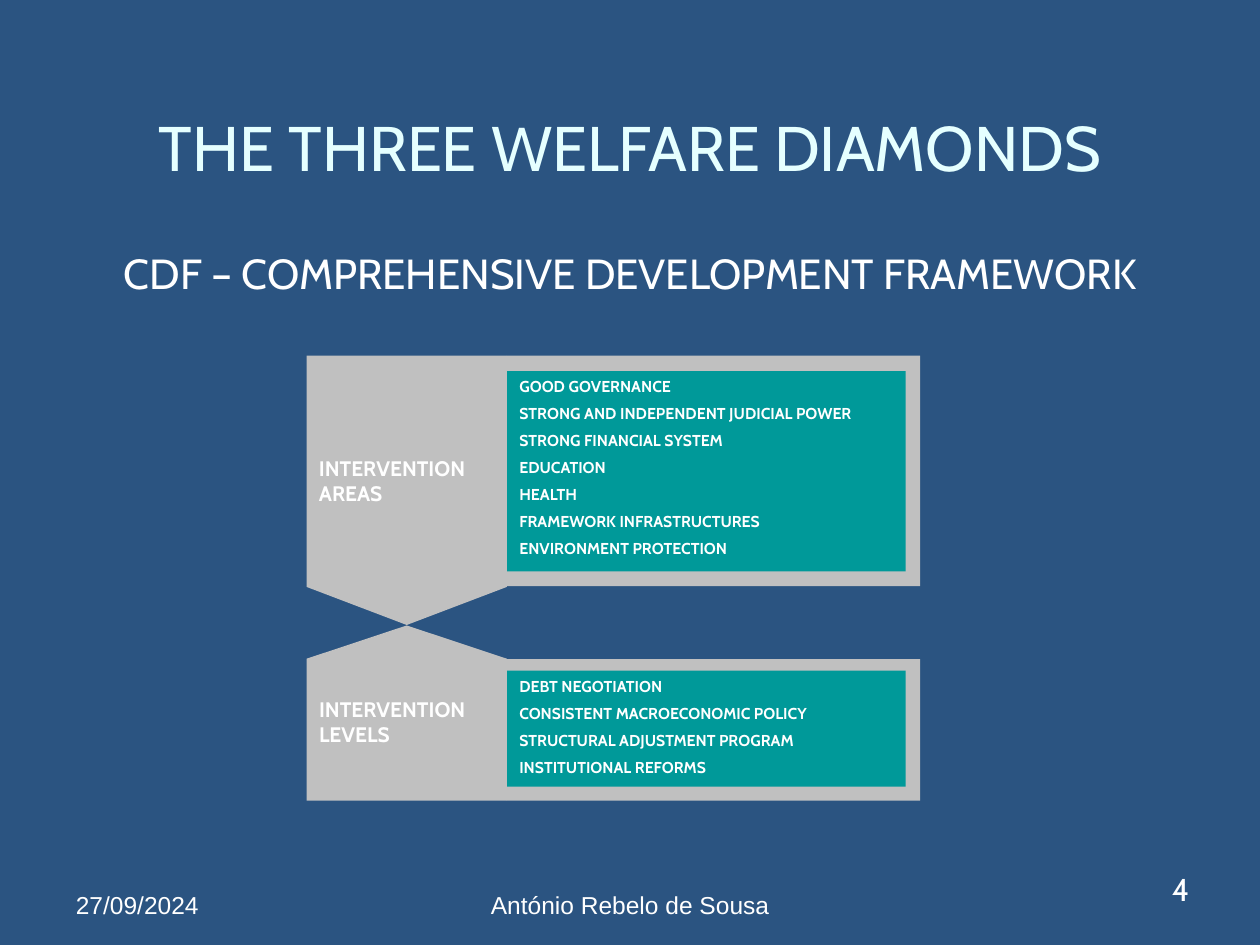
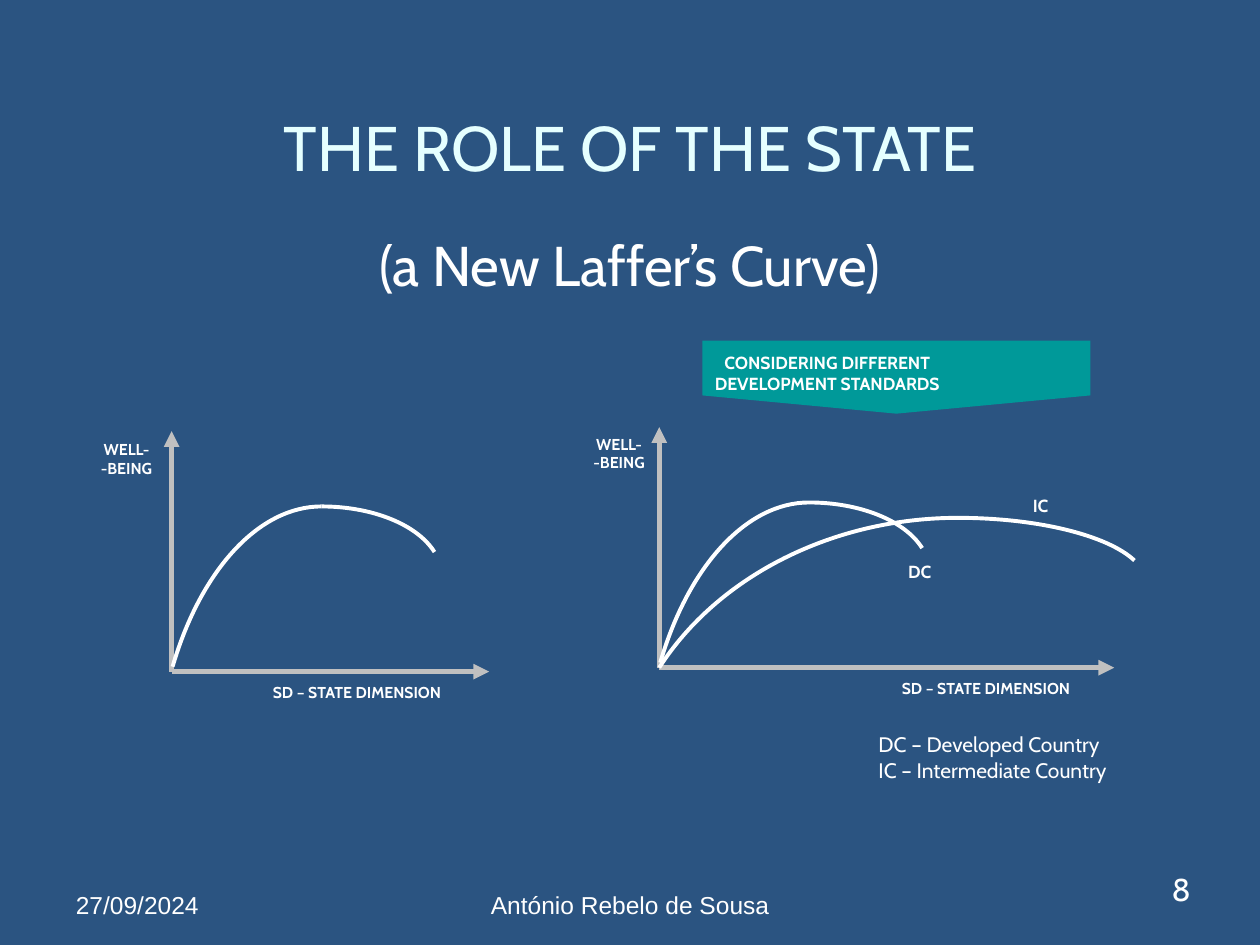
"""Build two slides on welfare diamonds and the role of the state."""
from copy import deepcopy
from dataclasses import dataclass

from lxml.etree import SubElement
from pptx import Presentation
from pptx.dml.color import RGBColor
from pptx.enum.shapes import MSO_CONNECTOR, MSO_SHAPE
from pptx.enum.text import MSO_ANCHOR, MSO_AUTO_SIZE, PP_ALIGN
from pptx.oxml.ns import qn
from pptx.util import Cm, Pt


@dataclass(frozen=True)
class Theme:
    back: RGBColor = RGBColor(0x2B, 0x54, 0x81)
    title: RGBColor = RGBColor(0xE5, 0xFF, 0xFF)
    text: RGBColor = RGBColor(0xFF, 0xFF, 0xFF)
    grey: RGBColor = RGBColor(0xC0, 0xC0, 0xC0)
    teal: RGBColor = RGBColor(0x00, 0x99, 0x99)
    font: str = "Cabin"
    footer_font: str = "Arial"
    title_pt: int = 36
    number_pt: int = 18
    footer_pt: int = 14
    head_pt: int = 12
    label_pt: int = 10
    small_pt: int = 9
    axis_pt: float = 3
    curve_pt: float = 2.25


T = Theme()
LEFT, CENTER = PP_ALIGN.LEFT, PP_ALIGN.CENTER
TOP, MIDDLE, BOTTOM = MSO_ANCHOR.TOP, MSO_ANCHOR.MIDDLE, MSO_ANCHOR.BOTTOM


def write(sp, paras, size, bold=False, align=LEFT, anchor=TOP, wrap=True, grow=False,
          color=T.text, font=T.font):
    tf = sp.text_frame
    tf.auto_size = MSO_AUTO_SIZE.SHAPE_TO_FIT_TEXT if grow else MSO_AUTO_SIZE.NONE
    tf.word_wrap = wrap
    tf.vertical_anchor = anchor
    for i, para in enumerate(paras):
        p = tf.add_paragraph() if i else tf.paragraphs[0]
        p.alignment = align
        p.space_before = Pt(size / 2 if i else 0)
        for j, line in enumerate(para.split("\n")):
            if j:
                p.add_line_break()
            r = p.add_run()
            r.text = line
            r.font.name = font
            r.font.size = Pt(size)
            r.font.bold = bold
            r.font.color.rgb = color


def plate(s, x, y, w, h, point, color, text, size, up=False, align=LEFT, fit=False):
    sp = s.shapes.add_shape(MSO_SHAPE.PENTAGON, Cm(x + (w - h) / 2),
                            Cm(y + (h - w) / 2), Cm(h), Cm(w))
    sp.adjustments[0] = point
    sp.rotation = 90 if up else 270
    xfrm = sp.element.spPr.find(qn("a:xfrm"))
    xfrm.set("flipH", "1")
    if up:
        xfrm.set("flipV", "1")
    sp.fill.solid()
    sp.fill.fore_color.rgb = color
    sp.line.fill.background()
    sp.shadow.inherit = False
    write(sp, [text], size, True, align, MIDDLE, wrap=fit, grow=fit)
    sp.element.find(".//" + qn("a:bodyPr")).set("vert", "eaVert")


prs = Presentation()
prs.slide_width, prs.slide_height = Cm(25.4), Cm(19.05)
fill = prs.slide_master.background.fill
fill.solid()
fill.fore_color.rgb = T.back

slides = []
for title, subtitle, size, top, height, number in [
    ("THE THREE WELFARE DIAMONDS", "CDF – COMPREHENSIVE DEVELOPMENT FRAMEWORK", 24, 4.86, 10.62, "4"),
    ("THE ROLE OF THE STATE", "(a New Laffer’s Curve)", 32, 4.52, 11.43, "8"),
]:
    s = prs.slides.add_slide(prs.slide_layouts[1])
    slides.append(s)
    head, body = s.placeholders
    for sp, y, h in [(head, 1.04, 3.81), (body, top, height)]:
        sp.left, sp.top, sp.width, sp.height = Cm(1.27), Cm(y), Cm(22.86), Cm(h)
    write(head, [title], T.title_pt, align=CENTER, anchor=MIDDLE, color=T.title)
    pPr = body.text_frame.paragraphs[0]._p.get_or_add_pPr()
    pPr.set("marL", "0")
    pPr.set("indent", "0")
    SubElement(pPr, qn("a:buNone"))
    write(body, [subtitle], size, align=CENTER)
    for x, y, w, h, text, size, align, anchor, font in [
        (1.28, 17.35, 5.92, 1.32, "27/09/2024", T.footer_pt, LEFT, BOTTOM, T.footer_font),
        (8.68, 17.35, 8.05, 1.32, "António Rebelo de Sousa", T.footer_pt, CENTER, BOTTOM, T.footer_font),
        (23.37, 17.42, 0.86, 1.02, number, T.number_pt, CENTER, TOP, T.font),
    ]:
        sp = s.shapes.add_textbox(Cm(x), Cm(y), Cm(w), Cm(h))
        fixed = size == T.footer_pt
        write(sp, [text], size, align=align, anchor=anchor, wrap=fixed, grow=not fixed, font=font)

diamonds, state = slides

areas = ["GOOD GOVERNANCE", "STRONG AND INDEPENDENT JUDICIAL POWER",
         "STRONG FINANCIAL SYSTEM", "EDUCATION", "HEALTH",
         "FRAMEWORK INFRASTRUCTURES", "ENVIRONMENT PROTECTION"]
levels = ["DEBT NEGOTIATION", "CONSISTENT MACROECONOMIC POLICY",
          "STRUCTURAL ADJUSTMENT PROGRAM", "INSTITUTIONAL REFORMS"]
for y, w, h, color, lines in [
    (13.29, 8.33, 2.85, T.grey, []),
    (7.17, 8.33, 4.65, T.grey, []),
    (7.48, 8.04, 4.04, T.teal, areas),
    (13.52, 8.04, 2.34, T.teal, levels),
]:
    sp = diamonds.shapes.add_shape(MSO_SHAPE.RECTANGLE, Cm(10.22), Cm(y), Cm(w), Cm(h))
    sp.fill.solid()
    sp.fill.fore_color.rgb = color
    sp.line.fill.background()
    sp.shadow.inherit = False
    if lines:
        write(sp, lines, T.small_pt, True)
plate(diamonds, 6.18, 7.17, 4.04, 5.43, 0.19, T.grey, "INTERVENTION\nAREAS", T.head_pt)
plate(diamonds, 6.18, 12.61, 4.04, 3.53, 0.19, T.grey, "INTERVENTION\nLEVELS", T.head_pt, up=True)

dc = [
    [(3.02, -3.33), (1.78, -3.33), (0.6, -2.08), (0.02, -0.1), (3.02, 2.79)],
    [(3.02, -3.33), (4.04, -3.33), (4.95, -2.97), (5.3, -2.41), (3.02, -1.96)],
]
ic = [
    [(6.02, -3.02), (3.51, -3.02), (1.19, -1.85), (0, 0), (6.02, 2.69)],
    [(6.02, -3.02), (7.62, -3.02), (9.04, -2.67), (9.58, -2.16), (6.02, -1.73)],
]
labels = [
    (17.46, 14.63, 5.44, 1.27, "DC – Developed Country\nIC – Intermediate Country", T.head_pt, False, LEFT),
    (18.06, 11.18, 1.02, 0.69, "DC", T.label_pt, True, LEFT),
    (20.57, 9.86, 0.91, 0.69, "IC", T.label_pt, True, LEFT),
]
for ox, oy, length, well_x, well_y, caption_x, arcs in [
    (3.46, 13.54, 6.4, 1.7, 8.75, 5.0, dc),
    (13.29, 13.46, 9.17, 11.63, 8.63, 17.68, dc + ic),
]:
    for dx, dy in [(0, -4.85), (length, 0)]:
        axis = state.shapes.add_connector(MSO_CONNECTOR.STRAIGHT, Cm(ox), Cm(oy),
                                          Cm(ox + dx), Cm(oy + dy))
        axis.line.color.rgb = T.grey
        axis.line.width = Pt(T.axis_pt)
        spPr = axis.element.spPr
        SubElement(spPr.find(qn("a:ln")), qn("a:tailEnd")).set("type", "triangle")
        SubElement(spPr, qn("a:effectLst"))
    for arc in arcs:
        pts = [(Cm(ox + x), Cm(oy + y)) for x, y in arc]
        fb = state.shapes.build_freeform(*pts[0])
        fb.add_line_segments(pts[1:], close=False)
        sp = fb.convert_to_shape()
        sp.fill.background()
        sp.line.color.rgb = T.text
        sp.line.width = Pt(T.curve_pt)
        sp.shadow.inherit = False
        outline = sp.element.find(".//" + qn("a:path"))
        *bends, hub = outline.findall(qn("a:lnTo"))
        bezier = SubElement(outline, qn("a:cubicBezTo"))
        for bend in bends:
            bezier.append(bend[0])
            outline.remove(bend)
        outline.append(hub)
        sector = deepcopy(outline)
        SubElement(sector, qn("a:close"))
        sector.set("stroke", "0")
        outline.remove(hub)
        outline.set("fill", "none")
        outline.addnext(sector)
    labels += [
        (well_x, well_y, 1.7, 1.02, "WELL-\n-BEING", T.small_pt, True, CENTER),
        (caption_x, oy + 0.09, 4.39, 0.64, "SD – STATE DIMENSION", T.small_pt, True, CENTER),
    ]
for x, y, w, h, text, size, bold, align in labels:
    sp = state.shapes.add_textbox(Cm(x), Cm(y), Cm(w), Cm(h))
    write(sp, [text], size, bold, align, wrap=False, grow=True)
plate(state, 14.16, 6.87, 7.82, 1.47, 0.25, T.teal,
      "CONSIDERING DIFFERENT\nDEVELOPMENT STANDARDS", T.label_pt, align=CENTER, fit=True)

prs.save("out.pptx")
